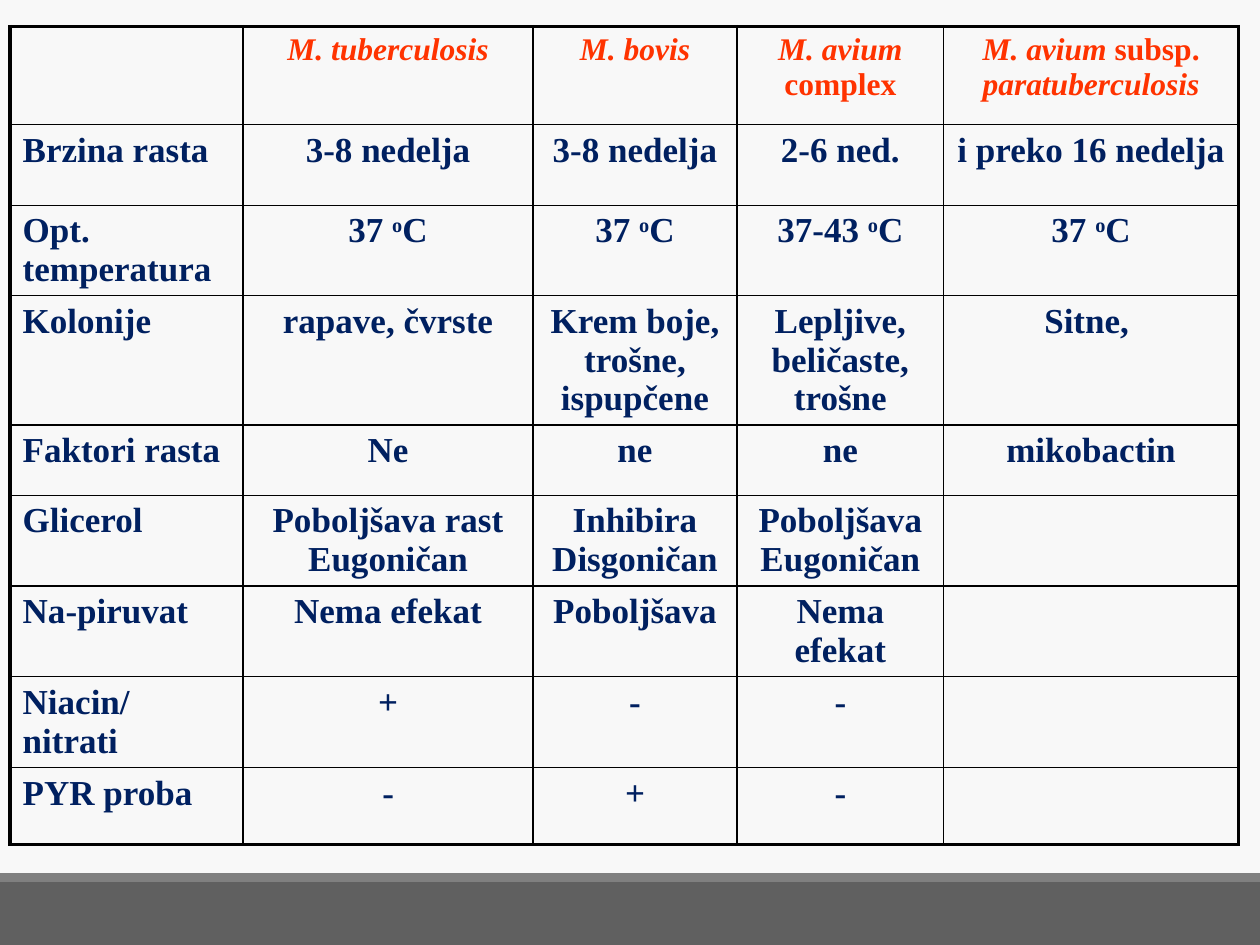
"""Build a slide comparing the growth traits of mycobacteria."""
from lxml import etree
from pptx import Presentation
from pptx.dml.color import RGBColor
from pptx.enum.shapes import MSO_SHAPE
from pptx.enum.text import PP_ALIGN
from pptx.oxml.ns import qn
from pptx.util import Inches, Pt

RECT = MSO_SHAPE.RECTANGLE
CENTER, LEFT = PP_ALIGN.CENTER, PP_ALIGN.LEFT
FONT = "Times New Roman"
HEX = {"back": "F8F8F8", "bar": "606060", "strip": "808080",
       "head": "FF3300", "body": "002060", "edge": "000000"}
THICK, THIN = Pt(2.25), Pt(1)

BARS = [("bar", 7, 0.5), ("strip", 6.93, 0.07)]
COLS = [1.85, 2.3, 1.62, 1.64, 2.34]
HIGH = [0.78, 0.64, 0.71, 1.02, 0.56, 0.72, 0.72, 0.72, 0.61]

DEG = [("o", "up"), ("C", "")]
WARM = [("37 ", "")] + DEG
ROWS = [
    ["", "M. tuberculosis", "M. bovis",
     [("M. avium", "it"), (" complex", "")],
     [("M. avium ", "it"), ("subsp.", ""), (" paratuberculosis", "it")]],
    ["Brzina rasta", "3-8 nedelja", "3-8 nedelja", "2-6 ned.", "i preko 16 nedelja"],
    ["Opt. temperatura", WARM, WARM, [("37-43 ", "")] + DEG, WARM],
    ["Kolonije", "rapave, čvrste", "Krem boje, trošne, ispupčene",
     "Lepljive, beličaste, trošne", "Sitne, "],
    ["Faktori rasta", "Ne", "ne", "ne", "mikobactin"],
    ["Glicerol", "Poboljšava rast\nEugoničan", "Inhibira\nDisgoničan",
     "Poboljšava\nEugoničan", ""],
    ["Na-piruvat", "Nema efekat", "Poboljšava", "Nema efekat", ""],
    ["Niacin/ nitrati", "+", "-", "-", ""],
    ["PYR proba", "-", "+", "-", ""],
]


def color(name):
    return RGBColor.from_string(HEX[name])


def write(cell, text, head, align):
    frame = cell.text_frame
    if isinstance(text, str):
        frame.text = text
    else:
        for part, style in text:
            run = frame.paragraphs[0].add_run()
            run.text = part
            if head:
                run.font.italic = style == "it"
            if style == "up":
                run.font._element.set("baseline", "30000")
    for para in frame.paragraphs:
        para.alignment = align
        font = para.font
        font.name, font.bold = FONT, True
        font.size = Pt(18 if head else 20)
        font.color.rgb = color("head" if head else "body")
        if head and isinstance(text, str):
            font.italic = True


def edge(cell, row, col):
    outer = {"lnL": col == 0, "lnR": col == len(COLS) - 1,
             "lnT": row == 0, "lnB": row == len(ROWS) - 1}
    props = cell._tc.get_or_add_tcPr()
    for spot, (tag, far) in enumerate(outer.items()):
        line = etree.Element(qn("a:" + tag), w=str(THICK if far else THIN))
        fill = etree.SubElement(line, qn("a:solidFill"))
        etree.SubElement(fill, qn("a:srgbClr"), val=HEX["edge"])
        props.insert(spot, line)


def main():
    deck = Presentation()
    deck.slide_width, deck.slide_height = Inches(10), Inches(7.5)
    slide = deck.slides.add_slide(deck.slide_layouts[6])
    back = slide.background.fill
    back.solid()
    back.fore_color.rgb = color("back")

    for name, top, high in BARS:
        bar = slide.shapes.add_shape(RECT, 0, Inches(top), Inches(10), Inches(high))
        bar.shadow.inherit = False
        bar.fill.solid()
        bar.fill.fore_color.rgb = color(name)
        bar.line.fill.background()

    table = slide.shapes.add_table(
        len(ROWS), len(COLS), Inches(0.08), Inches(0.21),
        Inches(sum(COLS)), Inches(sum(HIGH))).table
    table.first_row = table.horz_banding = False
    for col, wide in enumerate(COLS):
        table.columns[col].width = Inches(wide)
    for row, texts in enumerate(ROWS):
        table.rows[row].height = Inches(HIGH[row])
        for col, text in enumerate(texts):
            cell = table.cell(row, col)
            cell.fill.background()
            write(cell, text, row == 0, CENTER if col else LEFT)
            edge(cell, row, col)

    deck.save("out.pptx")


if __name__ == "__main__":
    main()
